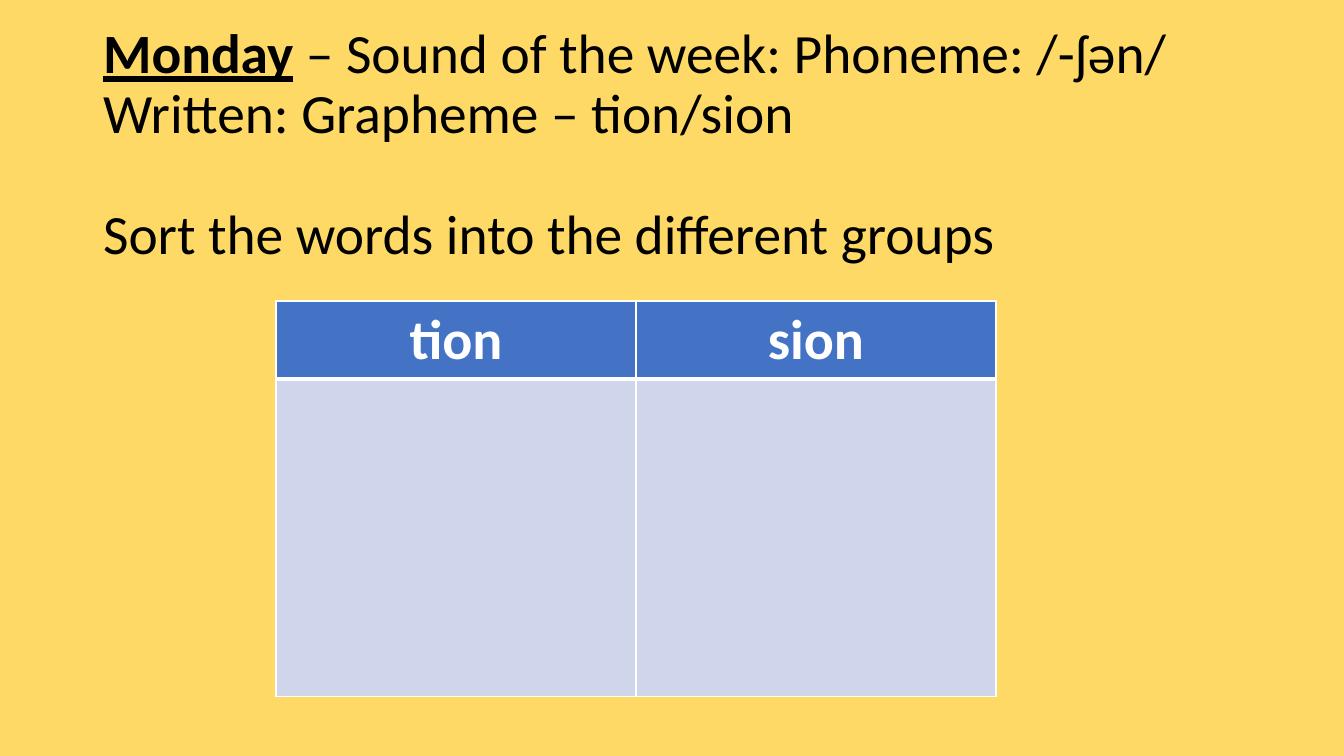
"""Build the Monday phoneme slide with a two-column word sorting table."""
from lxml import etree
from pptx import Presentation
from pptx import util as u
from pptx.dml.color import RGBColor
from pptx.enum import text
from pptx.oxml.ns import qn

TITLE = [
    [("Monday", True),
     (" – Sound of the week: Phoneme: /-ʃən/\vWritten: Grapheme – tion/sion", False)],
    [("Sort the words into the different groups", False)],
]
GROUPS = ["tion", "sion"]

YELLOW = RGBColor(0xFF, 0xD9, 0x66)
BLUE = RGBColor(0x44, 0x72, 0xC4)
PALE_BLUE = RGBColor(0xCF, 0xD5, 0xEA)
WHITE = RGBColor(0xFF, 0xFF, 0xFF)
BLACK = RGBColor(0x00, 0x00, 0x00)

SLIDE_SIZE = (1344, 756)
TITLE_BOX = (93, 73, 1159, 146)
TABLE_ORIGIN = (276, 301)
COLUMN_WIDTH = 360
ROW_HEIGHTS = (78, 317)
ROW_FILLS = (BLUE, PALE_BLUE)
ROW_BORDERS = (
    {"lnL": 1, "lnR": 1, "lnT": 1, "lnB": 3},
    {"lnL": 1, "lnR": 1, "lnT": 3, "lnB": 1},
)
TITLE_FRAME = {
    "auto_size": text.MSO_AUTO_SIZE.NONE,
    "vertical_anchor": text.MSO_ANCHOR.MIDDLE,
    "word_wrap": True,
}
TITLE_FONT = {"name": "Calibri", "size": u.Pt(39.6)}
HEADER_FONT = {"name": "Calibri", "size": u.Pt(40), "bold": True}
LINE_GAP = u.Pt(43.5)


def px(length):
    """Turn pixels into EMU."""
    return u.Emu(round(length * 914400 / 100.8))


def apply(target, values):
    """Set every named attribute on the target."""
    for name, value in values.items():
        setattr(target, name, value)


def add_run(paragraph, words, font, color):
    """Append formatted words, breaking lines at vertical tabs."""
    for index, line in enumerate(words.split("\v")):
        if index:
            paragraph.add_line_break()
        run = paragraph.add_run()
        run.text = line
        apply(run.font, font)
        run.font.color.rgb = color


def add_title(slide):
    """Fill the title placeholder."""
    title = slide.shapes.title
    apply(title, dict(zip(("left", "top", "width", "height"), map(px, TITLE_BOX))))
    frame = title.text_frame
    apply(frame, TITLE_FRAME)
    for index, runs in enumerate(TITLE):
        paragraph = frame.add_paragraph() if index else frame.paragraphs[0]
        apply(paragraph, {
            "alignment": text.PP_ALIGN.LEFT,
            "line_spacing": 0.9,
            "space_before": LINE_GAP if index else u.Pt(0),
        })
        for words, strong in runs:
            add_run(paragraph, words, TITLE_FONT | {"bold": strong, "underline": strong}, BLACK)


def set_borders(cell, borders):
    """Draw white cell borders with the given widths in points."""
    properties = cell._tc.get_or_add_tcPr()
    for tag, width in borders.items():
        line = etree.SubElement(properties, qn(f"a:{tag}"), w=str(u.Pt(width)))
        fill = etree.SubElement(line, qn("a:solidFill"))
        etree.SubElement(fill, qn("a:srgbClr"), val=str(WHITE))


def add_sorting_table(slide):
    """Add the table with a header per group and an empty space below."""
    size = (COLUMN_WIDTH * len(GROUPS), sum(ROW_HEIGHTS))
    frame = slide.shapes.add_table(
        len(ROW_HEIGHTS), len(GROUPS), *map(px, TABLE_ORIGIN + size))
    table = frame.table
    for column in table.columns:
        column.width = px(COLUMN_WIDTH)
    for row, height, fill, borders in zip(table.rows, ROW_HEIGHTS, ROW_FILLS, ROW_BORDERS):
        row.height = px(height)
        for cell in row.cells:
            set_borders(cell, borders)
            cell.fill.solid()
            cell.fill.fore_color.rgb = fill
    for cell, group in zip(table.rows[0].cells, GROUPS):
        paragraph = cell.text_frame.paragraphs[0]
        paragraph.alignment = text.PP_ALIGN.CENTER
        add_run(paragraph, group, HEADER_FONT, WHITE)


def main():
    """Create and save the presentation."""
    presentation = Presentation()
    presentation.slide_width, presentation.slide_height = map(px, SLIDE_SIZE)
    slide = presentation.slides.add_slide(presentation.slide_layouts[5])
    slide.background.fill.solid()
    slide.background.fill.fore_color.rgb = YELLOW
    add_title(slide)
    add_sorting_table(slide)
    presentation.save("out.pptx")


if __name__ == "__main__":
    main()
